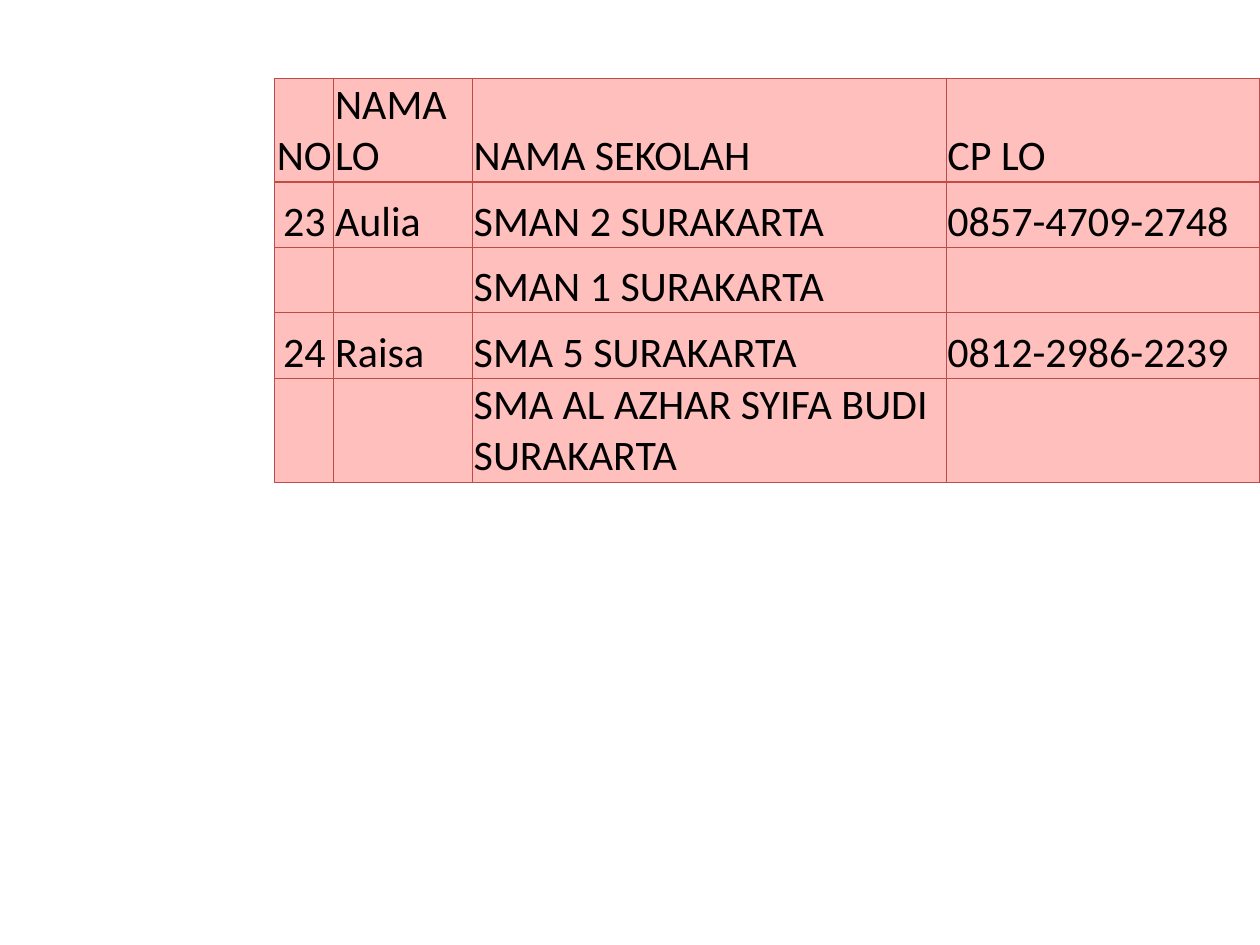
from dataclasses import dataclass

from lxml.etree import SubElement
from pptx import Presentation
from pptx.dml.color import RGBColor
from pptx.enum.text import MSO_ANCHOR, PP_ALIGN
from pptx.oxml.ns import qn
from pptx.util import Pt

COLORS = {"fill": "FFBFBD", "border": "BF4C48", "text": "000000"}
ROW_HEIGHT = 37.44


@dataclass(frozen=True)
class Column:
    width: float
    align: PP_ALIGN


@dataclass(frozen=True)
class School:
    number: str
    officer: str
    name: str
    phone: str

    def values(self) -> tuple[str, ...]:
        return self.number, self.officer, self.name, self.phone


COLUMNS = [
    Column(33.84, PP_ALIGN.CENTER),
    Column(79.2, PP_ALIGN.LEFT),
    Column(270.72, PP_ALIGN.LEFT),
    Column(179.28, PP_ALIGN.LEFT),
]

ROWS = [
    School("NO", "NAMA LO", "NAMA SEKOLAH", "CP LO"),
    School("23", "Aulia", "SMAN 2 SURAKARTA", "0857-4709-2748"),
    School("", "", "SMAN 1 SURAKARTA", ""),
    School("24", "Raisa", "SMA 5 SURAKARTA", "0812-2986-2239"),
    School("", "", "SMA AL AZHAR SYIFA BUDI SURAKARTA", ""),
]


def write_text(tf, text: str, *, size: float = 24, font: str = "Calibri",
               color: str = "text", align: PP_ALIGN = PP_ALIGN.LEFT) -> None:
    p = tf.paragraphs[0]
    p.alignment = align
    r = p.add_run()
    r.text = text
    r.font.size = Pt(size)
    r.font.name = font
    r.font.color.rgb = RGBColor.from_string(COLORS[color])


def set_borders(cell, color: str, width: float) -> None:
    tc_pr = cell._tc.get_or_add_tcPr()
    for side in ("lnL", "lnR", "lnT", "lnB"):
        ln = SubElement(tc_pr, qn(f"a:{side}"), w=str(Pt(width)))
        fill = SubElement(ln, qn("a:solidFill"))
        SubElement(fill, qn("a:srgbClr"), val=COLORS[color])


def format_cell(cell, text: str, align: PP_ALIGN) -> None:
    cell.margin_left = cell.margin_right = cell.margin_top = Pt(0.75)
    cell.margin_bottom = Pt(0)
    cell.vertical_anchor = MSO_ANCHOR.BOTTOM
    set_borders(cell, "border", 0.75)
    cell.fill.solid()
    cell.fill.fore_color.rgb = RGBColor.from_string(COLORS["fill"])
    if text:
        write_text(cell.text_frame, text, align=align)


def add_school_table(s, left: float, top: float) -> None:
    width = sum(column.width for column in COLUMNS)
    tbl = s.shapes.add_table(len(ROWS), len(COLUMNS), Pt(left), Pt(top),
                             Pt(width), Pt(ROW_HEIGHT * len(ROWS))).table
    tbl.first_row = tbl.horz_banding = False
    for i, column in enumerate(COLUMNS):
        tbl.columns[i].width = Pt(column.width)
    for i, school in enumerate(ROWS):
        tbl.rows[i].height = Pt(ROW_HEIGHT)
        for j, text in enumerate(school.values()):
            format_cell(tbl.cell(i, j), text, COLUMNS[j].align)


def main() -> None:
    prs = Presentation()
    prs.slide_width, prs.slide_height = Pt(720), Pt(540)
    s = prs.slides.add_slide(prs.slide_layouts[6])
    add_school_table(s, 156.96, 44.64)
    prs.save("out.pptx")


if __name__ == "__main__":
    main()
